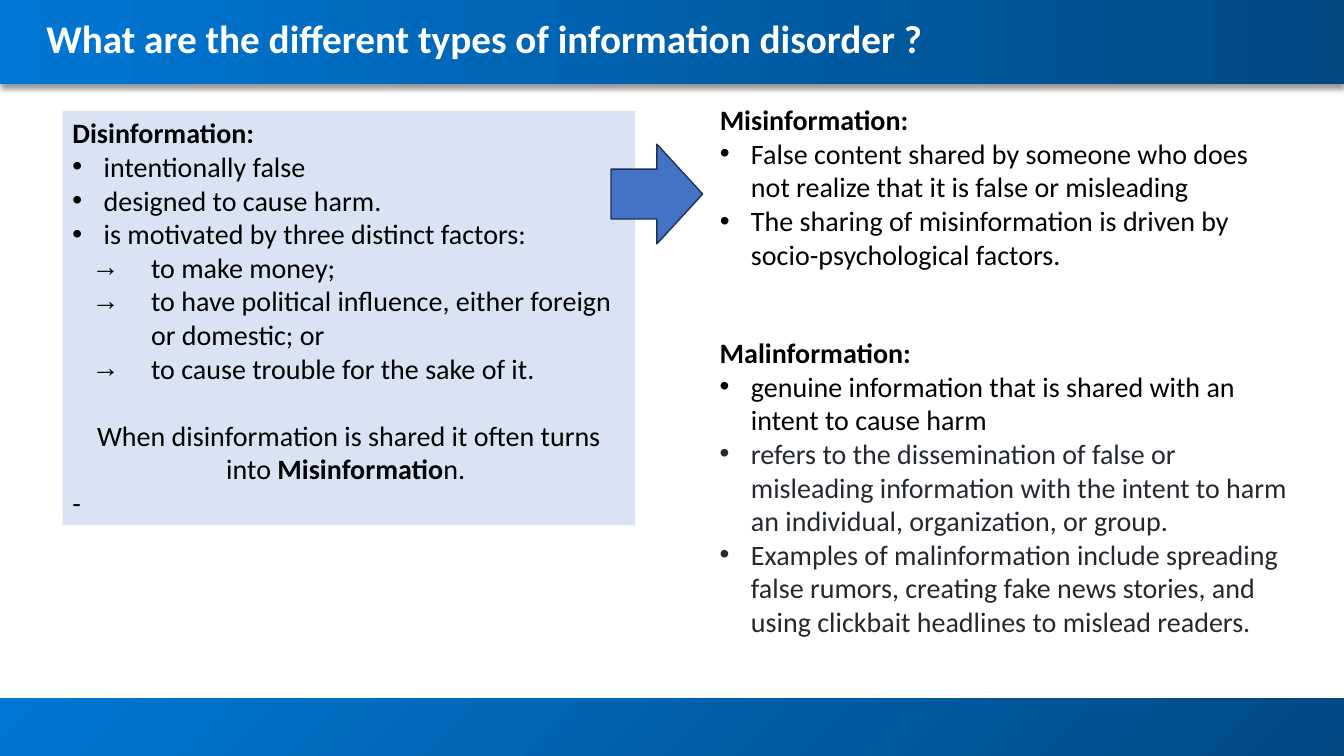
from lxml import etree
from pptx import Presentation
from pptx.dml.color import RGBColor
from pptx.enum.shapes import MSO_SHAPE
from pptx.enum.text import MSO_ANCHOR, MSO_AUTO_SIZE, PP_ALIGN
from pptx.oxml import parse_xml
from pptx.oxml.ns import nsdecls, qn
from pptx.util import Inches, Pt

RECTANGLE = MSO_SHAPE.RECTANGLE
RIGHT_ARROW = MSO_SHAPE.RIGHT_ARROW
TOP = MSO_ANCHOR.TOP
MIDDLE = MSO_ANCHOR.MIDDLE
LEFT = PP_ALIGN.LEFT
CENTER = PP_ALIGN.CENTER
NO_AUTOFIT = MSO_AUTO_SIZE.NONE
FIT_SHAPE = MSO_AUTO_SIZE.SHAPE_TO_FIT_TEXT

BRIGHT_BLUE = RGBColor(0x00, 0x77, 0xD4)
DEEP_BLUE = RGBColor(0x00, 0x49, 0x83)
PALE_BLUE = RGBColor(0xDA, 0xE3, 0xF3)
ARROW_BLUE = RGBColor(0x44, 0x72, 0xC4)
ARROW_EDGE = RGBColor(0x1E, 0x32, 0x56)
BLACK = RGBColor(0x00, 0x00, 0x00)
CHARCOAL = RGBColor(0x24, 0x29, 0x2F)
WHITE = RGBColor(0xFF, 0xFF, 0xFF)

FONT = "Calibri"
SLIDE_WIDTH, SLIDE_HEIGHT = 13.33, 7.5
# Bullet character, left margin and hanging indent in inches
DOT = ("•", 0.31, 0.31)
ARROW = ("→", 0.78, 0.59)


def add_shape(slide, kind, left, top, width, height):
    shape = slide.shapes.add_shape(
        kind, Inches(left), Inches(top), Inches(width), Inches(height))
    shape.shadow.inherit = False
    shape.line.fill.background()
    return shape


def add_bar(slide, top, height, start, end, angle):
    """Add a full-width gradient bar; the angle runs counter-clockwise."""
    bar = add_shape(slide, RECTANGLE, 0, top, SLIDE_WIDTH, height)
    bar.fill.gradient()
    bar.fill.gradient_angle = angle
    for stop, color in zip(bar.fill.gradient_stops, (start, end)):
        stop.color.rgb = color
    return bar


def add_drop_shadow(shape):
    effects = shape.element.spPr.find(qn("a:effectLst"))
    effects.append(parse_xml(
        f'<a:outerShdw {nsdecls("a")} blurRad="{Pt(4)}" dist="{Pt(3)}" '
        'dir="5400000" algn="t" rotWithShape="0"><a:srgbClr val="000000">'
        '<a:alpha val="40000"/></a:srgbClr></a:outerShdw>'))


def set_bullet(paragraph, bullet):
    character, margin, hanging = bullet
    properties = paragraph._p.get_or_add_pPr()
    properties.set("marL", str(Inches(margin)))
    properties.set("indent", str(-Inches(hanging)))
    etree.SubElement(properties, qn("a:buFont"), typeface="Arial")
    etree.SubElement(properties, qn("a:buChar"), char=character)


def write(paragraph, text, size=20, bold=False, color=BLACK, align=LEFT,
          bullet=None, space_before=0):
    """Add text to a paragraph; call again to add a run in another format."""
    if bullet:
        set_bullet(paragraph, bullet)
    paragraph.alignment = align
    if space_before:
        paragraph.space_before = Pt(space_before)
    run = paragraph.add_run()
    run.text = text
    run.font.name = FONT
    run.font.size = Pt(size)
    run.font.bold = bold
    run.font.color.rgb = color


def write_list(shape, heading, items):
    """Write a bold heading and its (text, bullet, color) items."""
    frame = shape.text_frame
    frame.word_wrap = True
    frame.auto_size = FIT_SHAPE
    frame.vertical_anchor = TOP
    write(frame.paragraphs[0], heading, bold=True)
    for text, bullet, color in items:
        write(frame.add_paragraph(), text, bullet=bullet, color=color)


def add_list_box(slide, left, top, width, height, heading, items):
    box = slide.shapes.add_textbox(
        Inches(left), Inches(top), Inches(width), Inches(height))
    write_list(box, heading, items)


def add_title(slide, text):
    title = slide.shapes.title
    title.left, title.top = Inches(0.46), Inches(0.17)
    title.width, title.height = Inches(12.41), Inches(0.5)
    frame = title.text_frame
    frame.margin_left = frame.margin_right = 0
    frame.margin_top = frame.margin_bottom = 0
    frame.auto_size = NO_AUTOFIT
    frame.vertical_anchor = MIDDLE
    frame.paragraphs[0].line_spacing = Pt(27.8)
    write(frame.paragraphs[0], text, size=28, bold=True, color=WHITE)
    # Bring the title in front of the header bar
    title.element.getparent().append(title.element)


def add_disinformation_panel(slide):
    panel = add_shape(slide, RECTANGLE, 0.62, 1.1, 5.68, 4.11)
    panel.fill.solid()
    panel.fill.fore_color.rgb = PALE_BLUE
    write_list(panel, "Disinformation:", [
        ("intentionally false", DOT, BLACK),
        ("designed to cause harm.", DOT, BLACK),
        ("is motivated by three distinct factors:", DOT, BLACK),
        ("to make money;", ARROW, BLACK),
        ("to have political influence, either foreign or domestic; or",
         ARROW, BLACK),
        ("to cause trouble for the sake of it.", ARROW, BLACK),
    ])
    conclusion = panel.text_frame.add_paragraph()
    write(conclusion, "When disinformation is shared it often turns into ",
          align=CENTER, space_before=24)
    write(conclusion, "Misinformatio", bold=True, align=CENTER)
    write(conclusion, "n. ", align=CENTER)
    write(panel.text_frame.add_paragraph(), "-")


def add_arrow(slide):
    arrow = add_shape(slide, RIGHT_ARROW, 6.06, 1.43, 0.91, 0.99)
    arrow.fill.solid()
    arrow.fill.fore_color.rgb = ARROW_BLUE
    arrow.line.color.rgb = ARROW_EDGE
    arrow.line.width = Pt(1)


def main():
    presentation = Presentation()
    presentation.slide_width = Inches(SLIDE_WIDTH)
    presentation.slide_height = Inches(SLIDE_HEIGHT)
    slide = presentation.slides.add_slide(presentation.slide_layouts[5])

    add_bar(slide, 6.93, 0.57, DEEP_BLUE, BRIGHT_BLUE, 135)
    header = add_bar(slide, 0, 0.83, BRIGHT_BLUE, DEEP_BLUE, 0)
    add_drop_shadow(header)
    add_title(slide, "What are the different types of information disorder ?")

    add_disinformation_panel(slide)
    add_list_box(slide, 7.04, 0.97, 5.68, 1.78, "Misinformation:", [
        ("False content shared by someone who does not realize that it is "
         "false or misleading", DOT, BLACK),
        ("The sharing of misinformation is driven by socio-psychological "
         "factors.", DOT, BLACK),
    ])
    add_arrow(slide)
    add_list_box(slide, 7.04, 3.28, 5.83, 3.13, "Malinformation:", [
        ("genuine information that is shared with an intent to cause harm",
         DOT, BLACK),
        ("refers to the dissemination of false or misleading information "
         "with the intent to harm an individual, organization, or group.",
         DOT, CHARCOAL),
        ("Examples of malinformation include spreading false rumors, "
         "creating fake news stories, and using clickbait headlines to "
         "mislead readers.", DOT, CHARCOAL),
    ])
    presentation.save("out.pptx")


if __name__ == "__main__":
    main()
